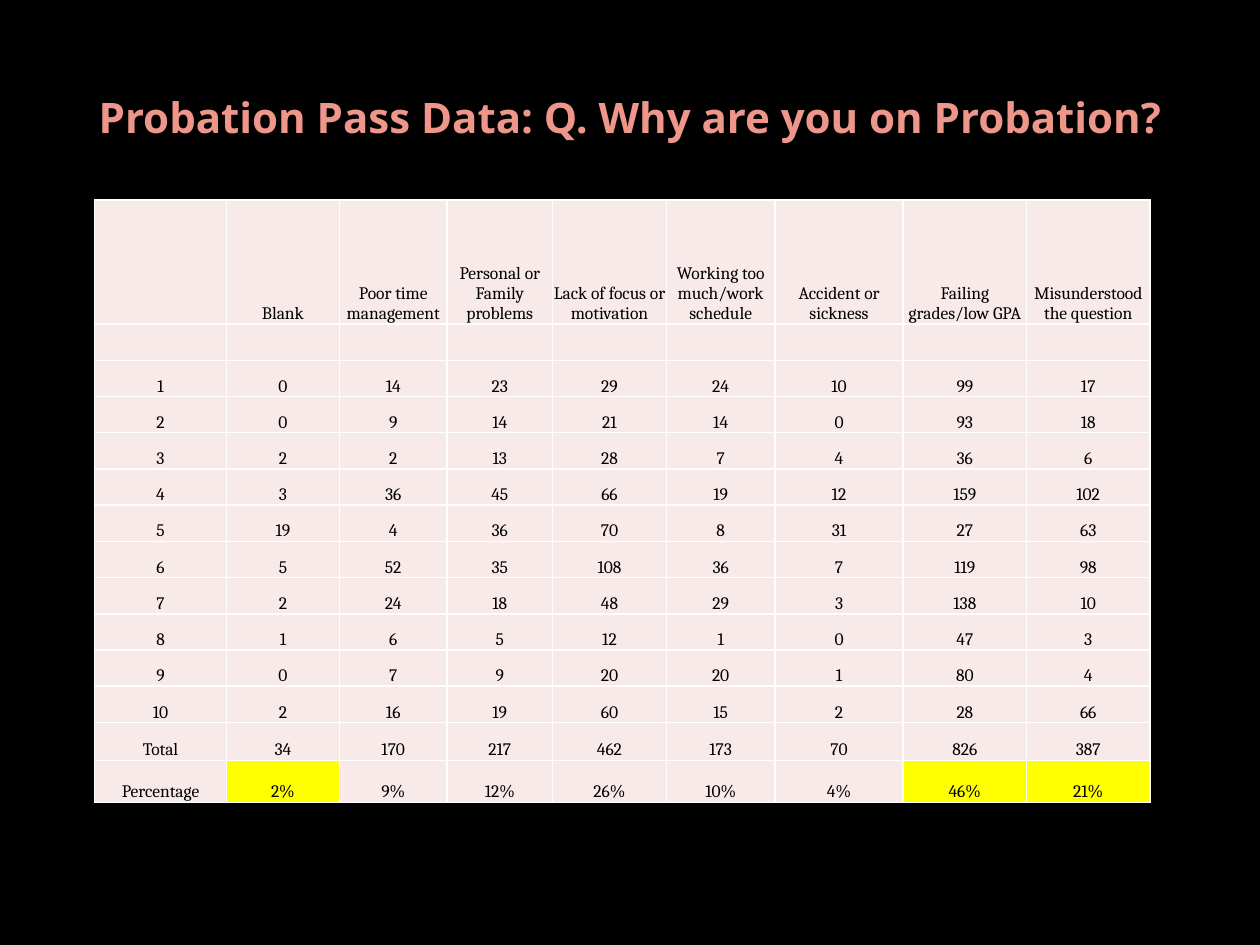
import pptx
import pptx.util
import pptx.dml.color
import pptx.enum.text
import pptx.oxml
import pptx.oxml.ns

Pt = pptx.util.Pt
ALIGN = pptx.enum.text.PP_ALIGN
ANCHOR = pptx.enum.text.MSO_ANCHOR

HEADERS = ["", "Blank", "Poor time management", "Personal or Family problems",
           "Lack of focus or motivation", "Working too much/work schedule",
           "Accident or sickness", "Failing grades/low GPA",
           "Misunderstood the question"]
ANSWERS = [
    [0, 14, 23, 29, 24, 10, 99, 17],
    [0, 9, 14, 21, 14, 0, 93, 18],
    [2, 2, 13, 28, 7, 4, 36, 6],
    [3, 36, 45, 66, 19, 12, 159, 102],
    [19, 4, 36, 70, 8, 31, 27, 63],
    [5, 52, 35, 108, 36, 7, 119, 98],
    [2, 24, 18, 48, 29, 3, 138, 10],
    [1, 6, 5, 12, 1, 0, 47, 3],
    [0, 7, 9, 20, 20, 1, 80, 4],
    [2, 16, 19, 60, 15, 2, 28, 66],
]
TOTALS = ["Total", 34, 170, 217, 462, 173, 70, 826, 387]
PERCENTAGES = ["Percentage", "2%", "9%", "12%", "26%", "10%", "4%", "46%", "21%"]
HIGHLIGHTS = ("2%", "46%", "21%")
COL_WIDTHS = [75.4, 64.6, 61.5, 60.3, 65.1, 62, 73.3, 70.5, 70.5]
ROW_HEIGHTS = [70.9] + [20.7] * 11 + [21.7, 24]


def rgb(color):
    return pptx.dml.color.RGBColor.from_string(color)


def style_paragraph(p, font, size, color, bold=False):
    p.alignment = ALIGN.CENTER
    p.font.name = font
    p.font.size = Pt(size)
    p.font.bold = bold
    p.font.color.rgb = rgb(color)


def add_title(s, text):
    sp = s.shapes.add_textbox(Pt(36), Pt(21.6), Pt(648), Pt(90))
    tf = sp.text_frame
    tf.word_wrap = True
    tf.vertical_anchor = ANCHOR.MIDDLE
    p = tf.paragraphs[0]
    p.text = text
    style_paragraph(p, "Open Sans", 24, "EE968A", bold=True)


def set_borders(cell, color, width):
    tc_pr = cell._tc.get_or_add_tcPr()
    for side in ("lnL", "lnR", "lnT", "lnB"):
        tc_pr.append(pptx.oxml.parse_xml(
            f'<a:{side} {pptx.oxml.ns.nsdecls("a")} w="{Pt(width)}"><a:solidFill>'
            f'<a:srgbClr val="{color}"/></a:solidFill></a:{side}>'))


def fill_cell(cell, text, fill):
    set_borders(cell, "FFFFFF", 1)
    cell.fill.solid()
    cell.fill.fore_color.rgb = rgb(fill)
    cell.margin_left = cell.margin_right = cell.margin_top = Pt(0.5)
    cell.margin_bottom = 0
    cell.vertical_anchor = ANCHOR.BOTTOM
    p = cell.text_frame.paragraphs[0]
    if text:
        p.text = text
    style_paragraph(p, "Cambria", 10, "000000")


def add_table(s, rows):
    table = s.shapes.add_table(
        len(rows), len(COL_WIDTHS), Pt(54), Pt(114.3),
        Pt(sum(COL_WIDTHS)), Pt(sum(ROW_HEIGHTS))).table
    table.first_row = False
    table.horz_banding = False
    for column, width in zip(table.columns, COL_WIDTHS):
        column.width = Pt(width)
    for row, height, values in zip(table.rows, ROW_HEIGHTS, rows):
        row.height = Pt(height)
        for cell, value in zip(row.cells, values):
            fill = "FFFF00" if value in HIGHLIGHTS else "F7EAE9"
            fill_cell(cell, str(value), fill)


def main():
    prs = pptx.Presentation()
    prs.slide_width, prs.slide_height = Pt(720), Pt(540)
    s = prs.slides.add_slide(prs.slide_layouts[6])
    s.background.fill.solid()
    s.background.fill.fore_color.rgb = rgb("000000")
    add_title(s, "Probation Pass Data: Q. Why are you on Probation?")
    numbered = [[i, *counts] for i, counts in enumerate(ANSWERS, 1)]
    add_table(s, [HEADERS, [""] * len(HEADERS), *numbered, TOTALS, PERCENTAGES])
    prs.save("out.pptx")


if __name__ == "__main__":
    main()
